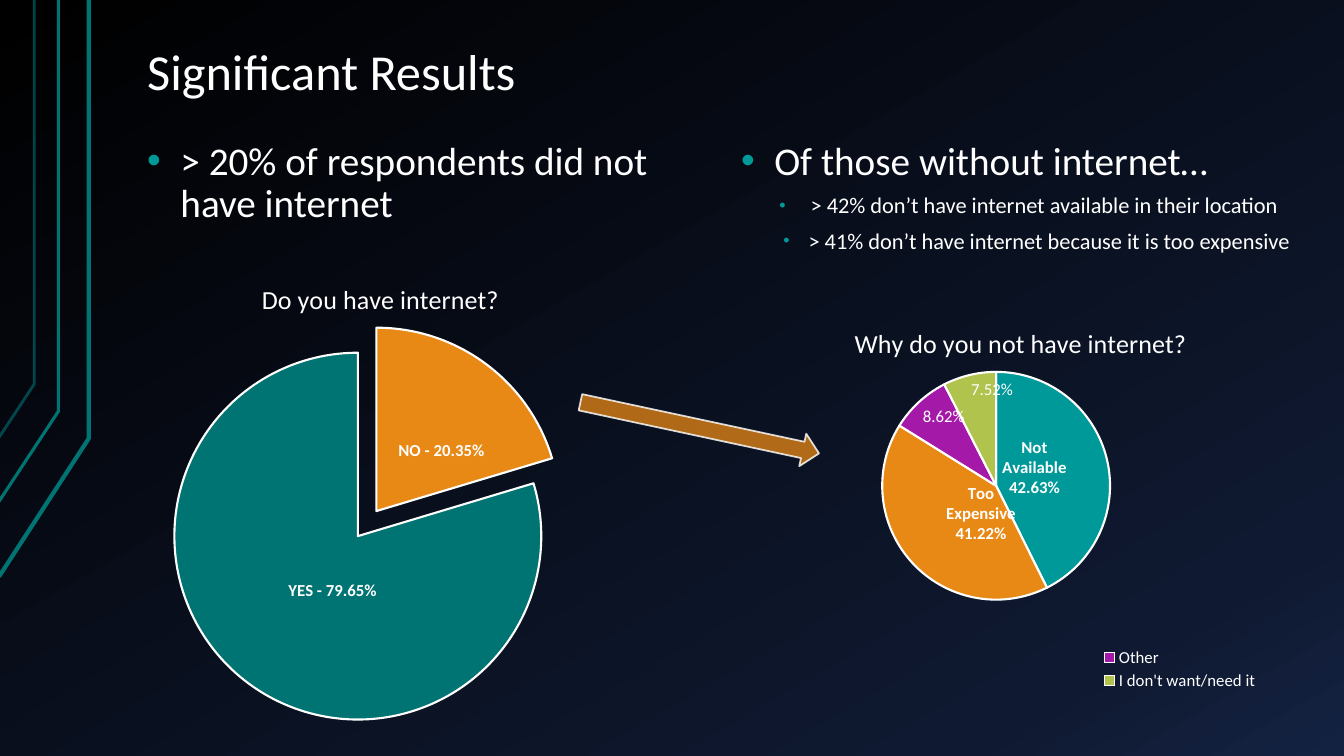
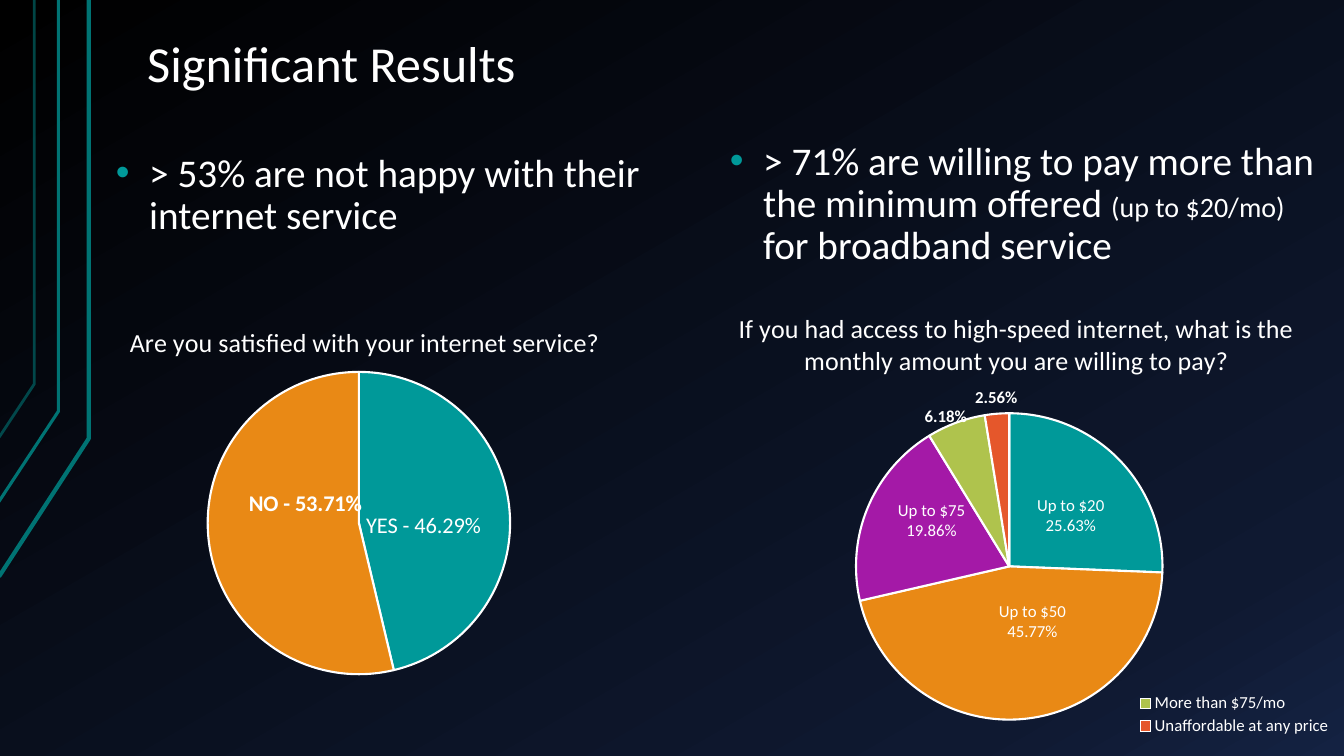
from copy import deepcopy
from dataclasses import dataclass
from math import cos, pi, sin

from lxml.etree import SubElement
from pptx import Presentation
from pptx.chart.data import CategoryChartData
from pptx.dml.color import RGBColor
from pptx.enum.chart import XL_CHART_TYPE as ChartType
from pptx.enum.chart import XL_LABEL_POSITION as LabelPosition
from pptx.enum.chart import XL_LEGEND_POSITION as LegendPosition
from pptx.enum.shapes import MSO_SHAPE as Shape
from pptx.enum.text import MSO_ANCHOR as Anchor
from pptx.oxml.ns import qn
from pptx.util import Inches, Pt


@dataclass(frozen=True)
class Theme:
    font: str = "Calibri"
    white: str = "FFFFFF"
    teal: str = "009999"
    deep_teal: str = "007373"
    orange: str = "E98915"
    purple: str = "A419A7"
    lime: str = "AFC34D"
    red: str = "E5572B"
    backdrop: tuple = ((0, "000000"), (0.85, "0F1931"), (1, "142242"))
    title: float = 36
    body: float = 28
    aside: float = 20
    detail: float = 16
    chart_title: float = 18.6
    large_label: float = 16
    label: float = 12
    chart_base: float = 10


THEME = Theme()
SERIES_COLORS = (THEME.teal, THEME.orange, THEME.purple, THEME.lime, THEME.red)


@dataclass(frozen=True)
class Label:
    center: tuple
    text: str = ""
    size: float = THEME.label
    bold: bool = False


@dataclass(frozen=True)
class Pie:
    box: tuple
    title: str
    title_at: tuple
    center: tuple
    radius: float
    categories: tuple
    values: tuple
    labels: tuple
    colors: tuple = SERIES_COLORS
    number_format: str = "0.00%"
    legend_box: tuple = ()
    legend_hides: tuple = ()
    explosion: int = 0


def rgb(color):
    return RGBColor.from_string(color)


def style_font(font, size, bold=False):
    font.name = THEME.font
    font.size = Pt(size)
    font.bold = bold
    font.color.rgb = rgb(THEME.white)


def add_span(para, text, size, bold=False):
    span = para.add_run()
    span.text = text
    style_font(span.font, size, bold)


def write_lines(frame, text, size, bold=False):
    for number, line in enumerate(text.split("\n")):
        para = frame.add_paragraph() if number else frame.paragraphs[0]
        add_span(para, line, size, bold)


def fade(fill_parent, percent):
    color = fill_parent.find(".//" + qn("a:srgbClr"))
    SubElement(color, qn("a:alpha")).set("val", str(percent * 1000))


def paint_backdrop(master):
    fill = master.background.fill
    fill.gradient()
    fill.gradient_angle = 300
    stops = master.element.find(".//" + qn("a:gsLst"))
    stops.append(deepcopy(stops[-1]))
    for stop, (position, color) in zip(fill.gradient_stops, THEME.backdrop):
        stop.position = position
        stop.color.rgb = rgb(color)


def add_side_lines(page):
    lines = (
        (((-0.01, 5.72), (0.88, 4.35), (0.88, 0)), 3, 100),
        (((-0.02, 4.99), (0.58, 4.08), (0.58, 0)), 2.25, 100),
        (((-0.01, 4.34), (0.34, 3.81), (0.34, 0)), 2, 60),
    )
    for points, width, opacity in lines:
        start, *rest = [(Inches(x), Inches(y)) for x, y in points]
        builder = page.shapes.build_freeform(*start)
        builder.add_line_segments(rest, close=False)
        line = builder.convert_to_shape()
        line.shadow.inherit = False
        line.fill.background()
        line.line.color.rgb = rgb(THEME.deep_teal)
        line.line.width = Pt(width)
        fade(line.element.spPr.find(qn("a:ln")), opacity)


def add_text_box(page, bounds, anchor=Anchor.TOP):
    box = page.shapes.add_textbox(*map(Inches, bounds))
    frame = box.text_frame
    frame.word_wrap = True
    frame.vertical_anchor = anchor
    frame.margin_left = frame.margin_right = Inches(0.13)
    frame.margin_top = frame.margin_bottom = Inches(0.07)
    return frame


def add_title(page, height):
    frame = add_text_box(page, (1.33, 0.3, 11.33, height), Anchor.BOTTOM)
    para = frame.paragraphs[0]
    para.line_spacing = 0.9
    add_span(para, "Significant Results", THEME.title)


def format_bullet(para, margin=0.33, hanging=0.33, before=16, bullet_size=100):
    para.line_spacing = 0.9
    para.space_before = Pt(before)
    props = para._p.get_or_add_pPr()
    props.set("marL", str(Inches(margin)))
    props.set("indent", str(-Inches(hanging)))
    color = SubElement(props, qn("a:buClr"))
    SubElement(color, qn("a:srgbClr")).set("val", THEME.teal)
    SubElement(props, qn("a:buSzPct")).set("val", str(bullet_size * 1000))
    SubElement(props, qn("a:buFont")).set("typeface", "Arial")
    SubElement(props, qn("a:buChar")).set("char", "•")


def add_statement(page, bounds, *spans):
    frame = add_text_box(page, bounds)
    para = frame.paragraphs[0]
    format_bullet(para)
    for text, size in spans:
        add_span(para, text, size)
    return frame


def add_detail(frame, text, margin, hanging):
    para = frame.add_paragraph()
    para.level = 1
    format_bullet(para, margin, hanging, before=8, bullet_size=80)
    add_span(para, text, THEME.detail)


def set_layout(parent, index, **settings):
    for old in parent.findall(qn("c:layout")):
        parent.remove(old)
    layout = SubElement(parent, qn("c:layout"))
    parent.insert(index, layout)
    manual = SubElement(layout, qn("c:manualLayout"))
    for name, value in settings.items():
        setting = value if isinstance(value, str) else f"{value:.4f}"
        SubElement(manual, qn("c:" + name)).set("val", setting)


def place_in_chart(parent, index, pie, bounds, **target):
    left, top, width, height = pie.box
    x, y, *size = bounds
    settings = dict(xMode="edge", yMode="edge", x=(x - left) / width, y=(y - top) / height)
    if size:
        settings.update(w=size[0] / width, h=size[1] / height)
    set_layout(parent, index, **target, **settings)


def add_chart_title(chart, pie):
    write_lines(chart.chart_title.text_frame, pie.title, THEME.chart_title)
    title = chart.element.find(".//" + qn("c:title"))
    place_in_chart(title, 1, pie, pie.title_at)


def add_legend(chart, pie):
    chart.has_legend = bool(pie.legend_box)
    if not pie.legend_box:
        return
    chart.legend.position = LegendPosition.BOTTOM
    chart.legend.include_in_layout = False
    style_font(chart.legend.font, THEME.label)
    legend = chart.element.find(".//" + qn("c:legend"))
    place_in_chart(legend, 1, pie, pie.legend_box)
    for number, hidden in enumerate(pie.legend_hides, start=1):
        entry = SubElement(legend, qn("c:legendEntry"))
        legend.insert(number, entry)
        SubElement(entry, qn("c:idx")).set("val", str(hidden))
        SubElement(entry, qn("c:delete")).set("val", "1")


def color_slices(chart, pie):
    points = chart.plots[0].series[0].points
    for index, color in enumerate(pie.colors[:len(pie.values)]):
        look = points[index].format
        look.fill.solid()
        look.fill.fore_color.rgb = rgb(color)
        look.line.color.rgb = rgb(THEME.white)
        look.line.width = Pt(1.5)
    if pie.explosion:
        first = chart.element.find(".//" + qn("c:dPt"))
        explosion = SubElement(first, qn("c:explosion"))
        explosion.set("val", str(pie.explosion))
        first.insert(1, explosion)


def label_slices(chart, pie):
    series = chart.plots[0].series[0]
    labels = series.data_labels
    labels.show_value = True
    labels.number_format = pie.number_format
    labels.number_format_is_linked = False
    labels.position = LabelPosition.CENTER
    style_font(labels.font, THEME.label)
    for index, label in enumerate(pie.labels):
        mark = series.points[index].data_label
        if label.text:
            write_lines(mark.text_frame, label.text, label.size, label.bold)
        else:
            style_font(mark.font, label.size, label.bold)
        mark.position = LabelPosition.CENTER
    for leader in chart.element.iter(qn("c:showLeaderLines")):
        leader.set("val", "0")

    total = sum(pie.values)
    passed = 0
    marks = chart.element.findall(".//" + qn("c:dLbl"))
    for index, (mark, label, value) in enumerate(zip(marks, pie.labels, pie.values)):
        angle = 2 * pi * (passed + value / 2) / total
        passed += value
        reach = pie.radius * (0.5 + (pie.explosion / 100 if index == 0 else 0))
        x = pie.center[0] + reach * sin(angle)
        y = pie.center[1] - reach * cos(angle)
        set_layout(mark, 1, x=(label.center[0] - x) / pie.box[2],
                   y=(label.center[1] - y) / pie.box[3])


def add_pie(page, pie):
    data = CategoryChartData(number_format=pie.number_format)
    data.categories = pie.categories
    data.add_series(pie.title, pie.values)
    chart = page.shapes.add_chart(ChartType.PIE, *map(Inches, pie.box), data).chart
    style_font(chart.font, THEME.chart_base)
    chart.plots[0].vary_by_categories = True
    add_chart_title(chart, pie)
    add_legend(chart, pie)
    color_slices(chart, pie)
    label_slices(chart, pie)
    x, y = pie.center
    circle = (x - pie.radius, y - pie.radius, 2 * pie.radius, 2 * pie.radius)
    place_in_chart(chart.element.find(".//" + qn("c:plotArea")), 0, pie, circle,
                   layoutTarget="inner")


def add_arrow(page):
    arrow = page.shapes.add_shape(Shape.RIGHT_ARROW, *map(Inches, (5.73, 4.08, 2.42, 0.33)))
    arrow.rotation = 12.1
    arrow.shadow.inherit = False
    arrow.fill.solid()
    arrow.fill.fore_color.rgb = rgb(THEME.orange)
    arrow.line.color.rgb = rgb(THEME.white)
    arrow.line.width = Pt(1.25)
    fade(arrow.element.spPr.find(qn("a:solidFill")), 75)
    fade(arrow.element.spPr.find(qn("a:ln")), 81)


def add_page(deck, title_height):
    page = deck.slides.add_slide(deck.slide_layouts[6])
    add_side_lines(page)
    add_title(page, title_height)
    return page


def build_access_page(deck):
    page = add_page(deck, 0.78)
    add_statement(page, (1.33, 1.33, 5.55, 5.42),
                  ("> 20% of respondents did not have internet", THEME.body))
    add_pie(page, Pie(
        (1.41, 2.5, 4.67, 4.8), "Do you have internet?", (2.55, 2.74), (3.55, 5.32), 1.82,
        ("1", "2"), (20.35, 79.65),
        (Label((4.38, 4.47), "NO - 20.35%", bold=True),
         Label((3.3, 5.86), "YES - 79.65%", bold=True)),
        colors=(THEME.orange, THEME.deep_teal), number_format="General", explosion=17))
    reasons = add_statement(page, (7.22, 1.33, 5.86, 5.42),
                            ("Of those without internet…", THEME.body))
    add_detail(reasons, "> 42% don’t have internet available in their location", 0.69, 0.31)
    add_detail(reasons, "> 41% don’t have internet because it is too expensive", 0.67, 0.25)
    add_pie(page, Pie(
        (7.5, 3, 5.17, 3.88), "Why do you not have internet?", (8.43, 3.18), (9.88, 4.82), 1.13,
        ("Not available at my location", "Too expensive", "Other", "I don't want/need it"),
        (0.4263, 0.4122, 0.0862, 0.0752),
        (Label((10.26, 4.64), "Not Available\n42.63%", bold=True),
         Label((9.73, 5.1), "Too Expensive\n41.22%", bold=True),
         Label((9.36, 4.13)), Label((9.84, 3.87))),
        legend_box=(10.88, 6.4, 1.65, 0.48), legend_hides=(0, 1)))
    add_arrow(page)


def build_service_page(deck):
    page = add_page(deck, 0.7)
    add_statement(page, (1.02, 1.45, 5.55, 5.42),
                  ("> 53% are not happy with their internet service", THEME.body))
    add_statement(page, (7.11, 1.33, 6.22, 5.42),
                  ("> 71% are willing to pay more than the minimum offered ", THEME.body),
                  ("(up to $20/mo) ", THEME.aside), ("for broadband service", THEME.body))
    add_pie(page, Pie(
        (0.58, 2.95, 5.97, 3.88), "Are you satisfied with your internet service?",
        (1.24, 3.17), (3.56, 5.19), 1.5, ("1", "2"), (0.4629, 0.5371),
        (Label((4.2, 5.22), "YES - 46.29%", THEME.large_label),
         Label((3.03, 5), "NO - 53.71%", THEME.large_label, True))))
    add_pie(page, Pie(
        (6.33, 2.75, 7.17, 5.34),
        "If you had access to high-speed internet, what is the monthly amount "
        "you are willing to pay?", (7.28, 3.03), (10.01, 5.62), 1.52,
        ("Up to $20/mo", "Up to $50/mo", "Up to $75/mo", "More than $75/mo",
         "Unaffordable at any price"),
        (0.2563, 0.4577, 0.1986, 0.0618, 0.0256),
        (Label((10.62, 5.12), "Up to $20\n25.63%"), Label((10.24, 6.17), "Up to $50\n45.77%"),
         Label((9.24, 5.17), "Up to $75\n19.86%"),
         Label((9.38, 4.13), bold=True), Label((9.88, 3.95), bold=True)),
        legend_box=(11.27, 6.85, 1.95, 0.48), legend_hides=(0, 1, 2)))


def main():
    deck = Presentation()
    deck.slide_width, deck.slide_height = Inches(13.33), Inches(7.5)
    paint_backdrop(deck.slide_master)
    build_access_page(deck)
    build_service_page(deck)
    deck.save("out.pptx")


if __name__ == "__main__":
    main()
